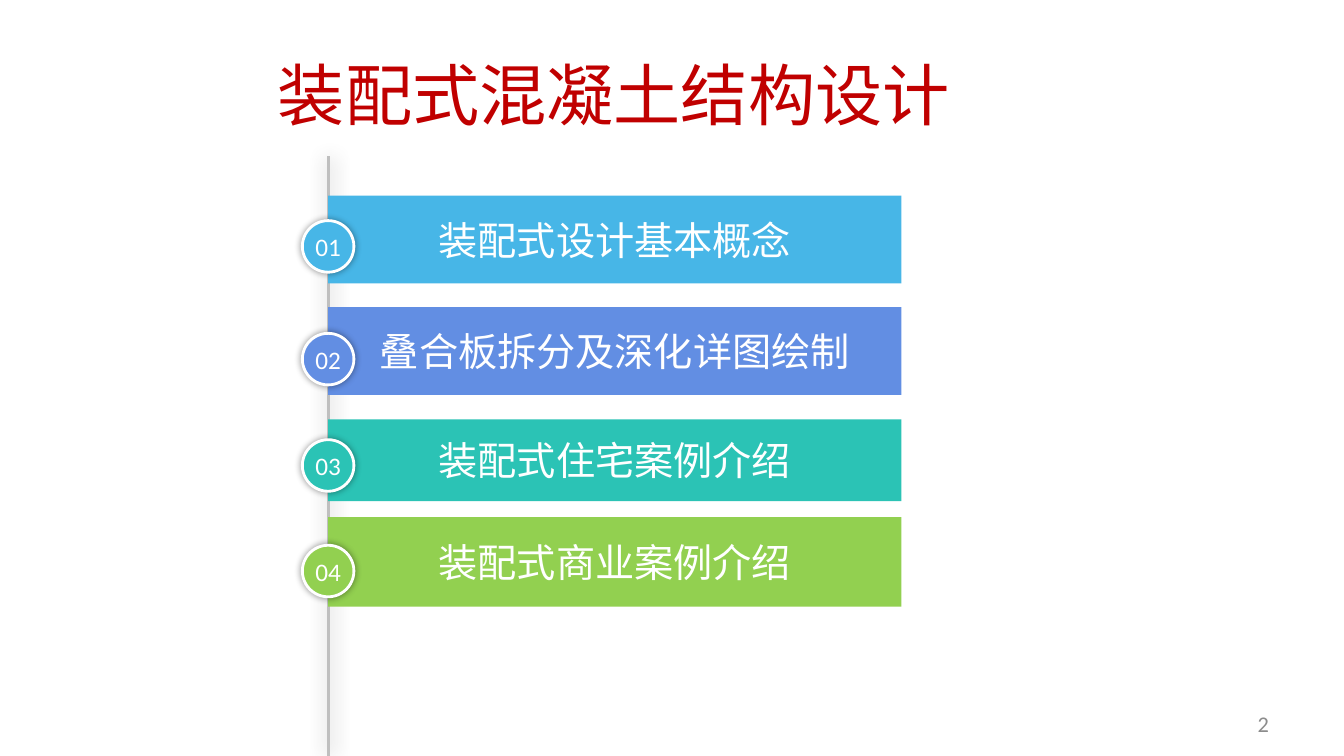
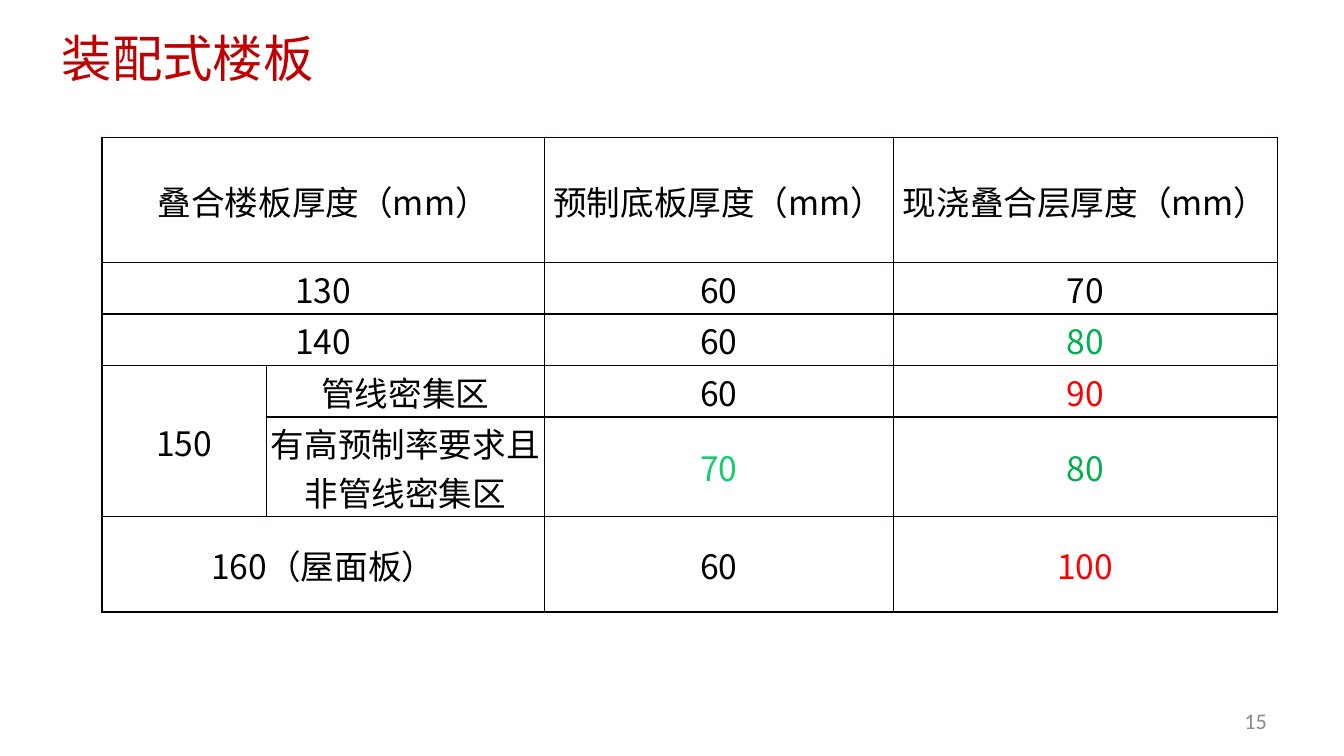
"""Build two slides on precast concrete design: an agenda and a slab table."""
from lxml import etree
from pptx import Presentation
from pptx.dml.color import RGBColor
from pptx.enum.shapes import MSO_CONNECTOR, MSO_SHAPE
from pptx.enum.text import MSO_ANCHOR as Anchor, MSO_AUTO_SIZE as Fit, PP_ALIGN as Align
from pptx.oxml import parse_xml
from pptx.oxml.ns import nsdecls, qn
from pptx.util import Cm, Pt

RED = RGBColor(0xC0, 0x00, 0x00)
WHITE = RGBColor(0xFF, 0xFF, 0xFF)
BLACK = RGBColor(0x00, 0x00, 0x00)
GRAY = RGBColor(0x8C, 0x8C, 0x8C)
SILVER = RGBColor(0xBF, 0xBF, 0xBF)
SKY = RGBColor(0x47, 0xB6, 0xE7)
BLUE = RGBColor(0x62, 0x8E, 0xE3)
TEAL = RGBColor(0x2B, 0xC3, 0xB5)
LIME = RGBColor(0x92, 0xD0, 0x50)
GREEN = RGBColor(0x00, 0xB0, 0x50)
MINT = RGBColor(0x14, 0xCD, 0x68)
ALERT = RGBColor(0xFF, 0x00, 0x00)
NOTO = "Noto Sans CJK SC"


def write(frame, text, size, color, font, align=Align.CENTER):
    frame.word_wrap = True
    frame.vertical_anchor = Anchor.MIDDLE
    para = frame.paragraphs[0]
    para.alignment = align
    run = para.add_run()
    run.text = text
    run.font.size = Pt(size)
    run.font.color.rgb = color
    run.font.name = font
    east = etree.SubElement(run.font._element, qn("a:ea"))
    east.set("typeface", NOTO)


def shade(shape, blur, dist):
    shape._element.spPr.append(parse_xml(
        f'<a:effectLst {nsdecls("a")}><a:outerShdw blurRad="{Pt(blur)}" dist="{Pt(dist)}" dir="0" '
        'algn="ctr" rotWithShape="0"><a:srgbClr val="000000"><a:alpha val="40000"/></a:srgbClr>'
        '</a:outerShdw></a:effectLst>'))


deck = Presentation()
deck.slide_width, deck.slide_height = Cm(33.87), Cm(19.05)

heads = [
    ("装配式混凝土结构设计", 48, NOTO, Align.CENTER, 0.23, 0.76, "2", 24.33, 17.73),
    ("装配式楼板", 36, "Times New Roman", Align.LEFT, 1.3, -0.15, "15", 24.28, 17.65),
]
slides = []
for text, size, font, align, left, top, num, num_x, num_y in heads:
    slide = deck.slides.add_slide(deck.slide_layouts[5])
    title = slide.shapes.title
    title.left, title.top, title.width, title.height = Cm(left), Cm(top), Cm(30.48), Cm(3.18)
    title.text_frame.auto_size = Fit.NONE
    write(title.text_frame, text, size, RED, font, align)
    box = slide.shapes.add_textbox(Cm(num_x), Cm(num_y), Cm(7.9), Cm(1.02))
    write(box.text_frame, num, 16, GRAY, "Calibri", Align.RIGHT)
    slides.append(slide)
agenda, slab = slides

axis = Cm(8.27)
rail = agenda.shapes.add_connector(MSO_CONNECTOR.STRAIGHT, axis, Cm(3.94), axis, Cm(19.05))
rail.line.color.rgb = SILVER
rail.line.width = Pt(2)
shade(rail, 14, 1)

topics = [
    ("装配式设计基本概念", SKY, 4.93, 2.21, 5.56),
    ("叠合板拆分及深化详图绘制", BLUE, 7.74, 2.21, 8.4),
    ("装配式住宅案例介绍", TEAL, 10.57, 2.06, 11.08),
    ("装配式商业案例介绍", LIME, 13.03, 2.26, 13.74),
]
for idx, (text, color, top, height, dot_y) in enumerate(topics, 1):
    bar = agenda.shapes.add_shape(MSO_SHAPE.RECTANGLE, axis, Cm(top), Cm(14.45), Cm(height))
    bar.line.fill.background()
    bar.shadow.inherit = False
    dot = agenda.shapes.add_shape(MSO_SHAPE.OVAL, Cm(7.62), Cm(dot_y), Cm(1.3), Cm(1.3))
    dot.line.color.rgb = WHITE
    dot.line.width = Pt(2)
    shade(dot, 5, 0)
    for shape, label, size, font in ((bar, text, 28, "Arial"), (dot, f"{idx:02}", 18, "Calibri")):
        shape.fill.solid()
        shape.fill.fore_color.rgb = color
        frame = shape.text_frame
        frame.margin_left = frame.margin_right = frame.margin_top = frame.margin_bottom = 0
        write(frame, label, size, WHITE, font)

rows = [
    ["叠合楼板厚度（mm）", "", "预制底板厚度（mm）", "现浇叠合层厚度（mm）"],
    ["130", "", "60", "70"],
    ["140", "", "60", "80"],
    ["150", "管线密集区", "60", "90"],
    ["", "有高预制率要求且非管线密集区", "70", "80"],
    ["160（屋面板）", "", "60", "100"],
]
tints = {(2, 3): GREEN, (3, 3): ALERT, (4, 2): MINT, (4, 3): GREEN, (5, 3): ALERT}
widths = [4.14, 7.01, 8.79, 9.68]
heights = [3.15, 1.3, 1.3, 1.3, 2.5, 2.41]
grid = slab.shapes.add_table(len(rows), len(widths), Cm(2.57), Cm(3.46),
                             Cm(sum(widths)), Cm(sum(heights))).table
grid.first_row = grid.horz_banding = False
for col, width in zip(grid.columns, widths):
    col.width = Cm(width)
for row, height in zip(grid.rows, heights):
    row.height = Cm(height)
for r in (0, 1, 2, 5):
    grid.cell(r, 0).merge(grid.cell(r, 1))
grid.cell(3, 0).merge(grid.cell(4, 0))

for r, row in enumerate(rows):
    for c, text in enumerate(row):
        cell = grid.cell(r, c)
        cell.margin_left = cell.margin_right = cell.margin_top = Cm(0.03)
        cell.margin_bottom = 0
        cell.vertical_anchor = Anchor.MIDDLE
        props = cell._tc.get_or_add_tcPr()
        for side in "LRTB":
            props.append(parse_xml(
                f'<a:ln{side} {nsdecls("a")} w="{Pt(1)}"><a:solidFill><a:srgbClr val="080000"/>'
                f'</a:solidFill></a:ln{side}>'))
        cell.fill.background()
        if text:
            write(cell.text_frame, text, 24, tints.get((r, c), BLACK), NOTO)

deck.save("out.pptx")
